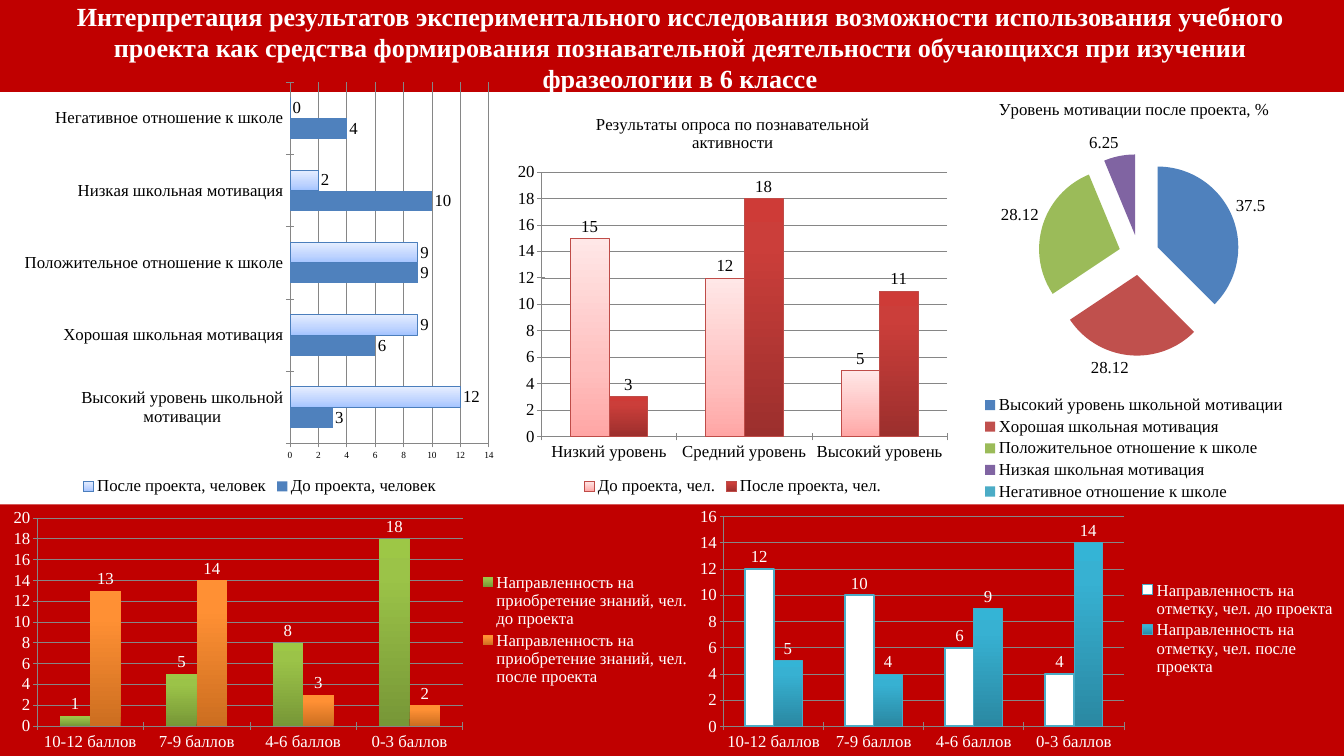
import copy

import pptx
import pptx.chart.data
import pptx.dml.color
import pptx.enum.chart
import pptx.enum.shapes
import pptx.enum.text
import pptx.oxml
import pptx.oxml.ns
import pptx.util

Pt = pptx.util.Pt
KIND = pptx.enum.chart.XL_CHART_TYPE
SIDE = pptx.enum.chart.XL_LEGEND_POSITION
FACE = "Times New Roman"
RED, WHITE, BLACK, GREY = "C00000", "FFFFFF", "000000", "868686"

MOTIVATION = ["Высокий уровень школьной мотивации", "Хорошая школьная мотивация",
              "Положительное отношение к школе", "Низкая школьная мотивация",
              "Негативное отношение к школе"]
ACTIVITY = ["Низкий уровень", "Средний уровень", "Высокий уровень"]
SCORES = ["10-12 баллов", "7-9 баллов", "4-6 баллов", "0-3 баллов"]
PIE_COLOURS = ["4F81BD", "C0504D", "9BBB59", "8064A2", "4BACC6"]

GREEN = [(0, "779737"), (0.8, "9BC348"), (1, "9DC746")]
ORANGE = [(0, "CC6E20"), (0.8, "FF9034"), (1, "FF9136")]
TEAL = [(0, "2A88A2"), (0.8, "37B1D2"), (1, "34B4D6")]
PALE_BLUE = [(0, "A4C4FF"), (0.35, "BFD4FF"), (1, "E6EEFF")]
PALE_RED = [(0, "FFA6A5"), (0.35, "FFC0BF"), (1, "FFE7E7")]
DARK_RED = [(0, "9C2F2D"), (0.8, "CB3E3A"), (1, "CE3B37")]


def colour(code):
    return pptx.dml.color.RGBColor.from_string(code)


def set_font(font, size, code):
    font.name = FACE
    font.size = Pt(size)
    font.bold = False
    font.color.rgb = colour(code)


def add_band(page, box):
    band = page.shapes.add_shape(pptx.enum.shapes.MSO_SHAPE.RECTANGLE, *map(Pt, box))
    band.shadow.inherit = False
    band.fill.solid()
    band.fill.fore_color.rgb = colour(RED)
    band.line.fill.background()


def add_heading(page, box, words):
    frame = page.shapes.add_textbox(*map(Pt, box)).text_frame
    frame.word_wrap = True
    frame.margin_left = frame.margin_right = frame.margin_top = frame.margin_bottom = 0
    para = frame.paragraphs[0]
    para.alignment = pptx.enum.text.PP_ALIGN.CENTER
    span = para.add_run()
    span.text = words
    set_font(span.font, 28, WHITE)
    span.font.bold = True


def add_chart(page, box, kind, categories, columns, plot_box, side, code, title=None):
    data = pptx.chart.data.CategoryChartData()
    data.categories = categories
    for name, values in columns:
        data.add_series(name, values)
    chart = page.shapes.add_chart(kind, *map(Pt, box), data).chart
    chart.font.name = "Calibri"
    chart.font.size = Pt(10)
    chart.font.color.rgb = colour(BLACK)
    chart.has_title = title is not None
    if title:
        span = chart.chart_title.text_frame.paragraphs[0].add_run()
        span.text = title
        set_font(span.font, 18, code)
    chart.has_legend = True
    chart.legend.position = side
    chart.legend.include_in_layout = False
    set_font(chart.legend.font, 18, code)
    for series in chart.plots[0].series:
        labels = series.data_labels
        labels.show_value = True
        labels.position = pptx.enum.chart.XL_LABEL_POSITION.OUTSIDE_END
        set_font(labels.font, 18, code)
    place_plot(chart, plot_box)
    return chart


def place_plot(chart, plot_box):
    area = chart._chartSpace.chart.plotArea
    for old in area.findall(pptx.oxml.ns.qn("c:layout")):
        area.remove(old)
    parts = "".join(f'<c:{tag} val="{value}"/>' for tag, value in zip("xywh", plot_box))
    area.insert(0, pptx.oxml.parse_xml(
        f'<c:layout {pptx.oxml.ns.nsdecls("c")}><c:manualLayout>'
        '<c:layoutTarget val="inner"/><c:xMode val="edge"/><c:yMode val="edge"/>'
        f'{parts}</c:manualLayout></c:layout>'))


def paint_series(series, paint, outline):
    fill = series.format.fill
    if isinstance(paint, str):
        fill.solid()
        fill.fore_color.rgb = colour(paint)
    else:
        fill.gradient()
        fill.gradient_angle = 90
        stops = series._element.find(".//" + pptx.oxml.ns.qn("a:gsLst"))
        stops.append(copy.deepcopy(stops[-1]))
        for stop, (position, code) in zip(fill.gradient_stops, paint):
            stop.position = position
            stop.color.rgb = colour(code)
    if outline:
        series.format.line.color.rgb = colour(outline[0])
        series.format.line.width = Pt(outline[1])
    else:
        series.format.line.fill.background()


def add_bars(page, box, kind, categories, rows, plot_box, side, code,
             title=None, value_size=18):
    columns = [(name, values) for name, values, _, _ in rows]
    chart = add_chart(page, box, kind, categories, columns, plot_box, side, code, title)
    plot = chart.plots[0]
    plot.vary_by_categories = False
    plot.gap_width = 150
    for series, (_, _, paint, outline) in zip(plot.series, rows):
        series.invert_if_negative = False
        paint_series(series, paint, outline)
    for axis, size in ((chart.category_axis, 18), (chart.value_axis, value_size)):
        set_font(axis.tick_labels.font, size, code)
        axis.major_tick_mark = pptx.enum.chart.XL_TICK_MARK.CROSS
        axis.format.line.color.rgb = colour(GREY)
    chart.value_axis.has_major_gridlines = True
    chart.value_axis.major_gridlines.format.line.color.rgb = colour(GREY)


def add_pie(page, box, title, categories, values, plot_box):
    chart = add_chart(page, box, KIND.PIE, categories, [(title, values)], plot_box,
                      SIDE.BOTTOM, BLACK, title)
    chart.plots[0].vary_by_categories = True
    series = chart.plots[0].series[0]
    for index, code in enumerate(PIE_COLOURS):
        fill = series.points[index].format.fill
        fill.solid()
        fill.fore_color.rgb = colour(code)
    series._element.find(pptx.oxml.ns.qn("c:tx")).addnext(pptx.oxml.parse_xml(
        f'<c:explosion {pptx.oxml.ns.nsdecls("c")} val="25"/>'))


def main():
    deck = pptx.Presentation()
    deck.slide_width, deck.slide_height = Pt(1440), Pt(810)
    page = deck.slides.add_slide(deck.slide_layouts[6])
    add_band(page, (0, 540.5, 1440, 269.5))
    add_band(page, (0, 0, 1440, 98.5))
    add_heading(page, (39.5, 0, 1378, 101.5),
                "Интерпретация результатов экспериментального исследования возможности "
                "использования учебного проекта как средства формирования познавательной "
                "деятельности обучающихся при изучении фразеологии в 6 классе")
    add_bars(page, (736.5, 537, 703.5, 273), KIND.COLUMN_CLUSTERED, SCORES, [
        ("Направленность на отметку, чел. до проекта", (12, 10, 6, 4), WHITE, ("4BACC6", 2)),
        ("Направленность на отметку, чел. после проекта", (5, 4, 9, 14), TEAL,
         ("46AAC5", 0.75)),
    ], (0.055, 0.06, 0.61, 0.824), SIDE.RIGHT, WHITE)
    add_bars(page, (0, 540, 748, 270), KIND.COLUMN_CLUSTERED, SCORES, [
        ("Направленность на приобретение знаний, чел. до проекта", (1, 5, 8, 18), GREEN, None),
        ("Направленность на приобретение знаний, чел. после проекта", (13, 14, 3, 2), ORANGE,
         None),
    ], (0.053, 0.056, 0.61, 0.825), SIDE.RIGHT, WHITE)
    add_pie(page, (990, 90, 450, 450), "Уровень мотивации после проекта, %", MOTIVATION,
            (37.5, 28.12, 28.12, 6.25, 0), (0.272, 0.167, 0.48, 0.48))
    add_bars(page, (16.5, 78.5, 523.5, 456), KIND.BAR_CLUSTERED, MOTIVATION, [
        ("До проекта, человек", (3, 6, 9, 10, 4), "4F81BD", None),
        ("После проекта, человек", (12, 9, 9, 2, 0), PALE_BLUE, ("4B7EBC", 0.75)),
    ], (0.562, 0.021, 0.407, 0.849), SIDE.BOTTOM, BLACK, value_size=10)
    add_bars(page, (546, 106.5, 478, 428), KIND.COLUMN_CLUSTERED, ACTIVITY, [
        ("До проекта, чел.", (15, 12, 5), PALE_RED, ("BF4C48", 0.75)),
        ("После проекта, чел.", (3, 18, 11), DARK_RED, ("BF4C48", 0.75)),
    ], (0.071, 0.182, 0.91, 0.662), SIDE.BOTTOM, BLACK,
        "Результаты опроса по познавательной активности")
    deck.save("out.pptx")


if __name__ == "__main__":
    main()
